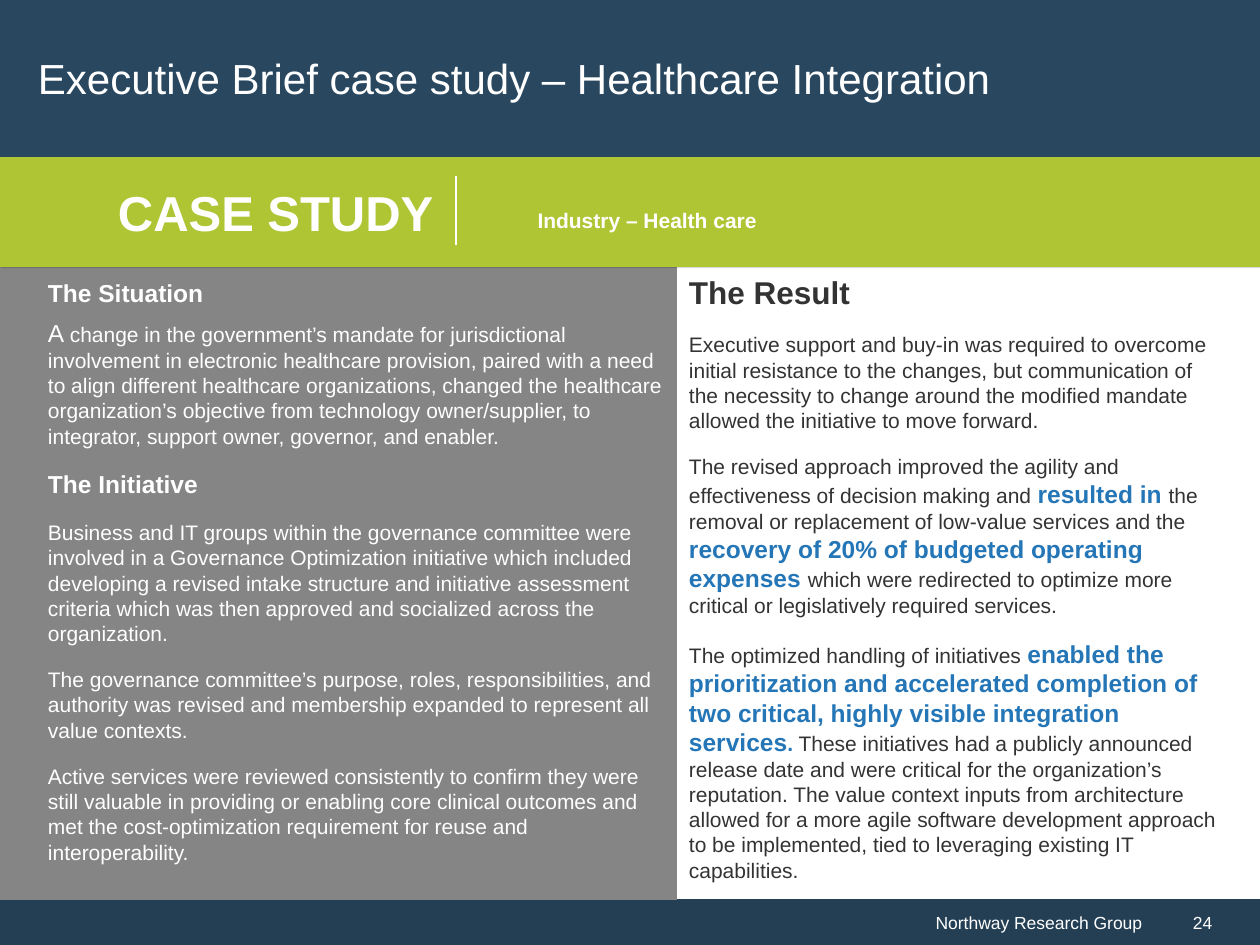
from lxml import etree
from pptx import Presentation
from pptx import util as u
from pptx.dml.color import RGBColor
from pptx.enum import shapes, text
from pptx.oxml.ns import qn

PX = u.Inches(1) / 126
COLORS = {"navy": "29475F", "footer": "243F54", "gray": "858585", "lime": "B0C534",
          "white": "FFFFFF", "dark": "333333", "blue": "2576B7", "black": "000000"}

# style: size in points, bold, colour
STYLES = {
    "title": (24, False, "white"), "banner": (28, True, "white"),
    "industry": (12, True, "white"), "footer": (10, False, "white"),
    "head": (14, True, "white"), "initial": (14, False, "white"), "body": (12, False, "white"),
    "result": (18, True, "dark"), "plain": (12, False, "dark"),
    "key": (14, True, "blue"), "key_small": (12, True, "blue"),
}

TITLE = [[("Executive Brief case study – Healthcare Integration", "title")]]
BANNER = [[("CASE STUDY", "banner")]]
INDUSTRY = [[("Industry – Health care", "industry")]]
GROUP_NAME = [[("Northway Research Group", "footer")]]
PAGE = [[("24", "footer")]]

STORY = [
    [("The Situation", "head")],
    [("A ", "initial"),
     ("change in the government’s mandate for jurisdictional involvement in electronic "
      "healthcare provision, paired with a need to align different healthcare organizations, "
      "changed the healthcare organization’s objective from technology owner/supplier, to "
      "integrator, support owner, governor, and enabler.", "body")],
    [("The Initiative", "head")],
    [("Business and IT groups within the governance committee were involved in a Governance "
      "Optimization initiative which included developing a revised intake structure and "
      "initiative assessment criteria which was then approved and socialized across the "
      "organization.", "body")],
    [("The governance committee’s purpose, roles, responsibilities, and authority was revised "
      "and membership expanded to represent all value contexts.", "body")],
    [("Active services were reviewed consistently to confirm they were still valuable in "
      "providing or enabling core clinical outcomes and met the cost-optimization requirement "
      "for reuse and interoperability.", "body")],
]

RESULT = [
    [("The Result", "result")],
    [("Executive support and buy-in was required to overcome initial resistance to the changes, "
      "but communication of the necessity to change around the modified mandate allowed the "
      "initiative to move forward.", "plain")],
    [("The revised approach improved the agility and effectiveness of decision making and ",
      "plain"),
     ("resulted in ", "key"),
     ("the removal or replacement of low-value services and the ", "plain"),
     ("recovery of 20% of budgeted operating expenses ", "key"),
     ("which were redirected to optimize more critical or legislatively required services.",
      "plain")],
    [("The optimized handling of initiatives ", "plain"),
     ("enabled the prioritization and accelerated completion of two critical, highly visible "
      "integration services", "key"),
     (".", "key_small"),
     (" These initiatives had a publicly announced release date and were critical for the "
      "organization’s reputation. The value context inputs from architecture allowed for a more "
      "agile software development approach to be implemented, tied to leveraging existing IT "
      "capabilities.", "plain")],
]


def px(n):
    return u.Emu(round(n * PX))


def rgb(name):
    return RGBColor.from_string(COLORS[name])


def write(sp, paragraphs, align="LEFT", anchor="MIDDLE", left=13, right=13,
          before=(), after=0, spacing=None):
    """Fill a shape run by run; before lists the space above each paragraph."""
    tf = sp.text_frame
    tf.word_wrap = True
    tf.vertical_anchor = text.MSO_ANCHOR[anchor]
    tf.margin_left, tf.margin_right = px(left), px(right)
    for i, runs in enumerate(paragraphs):
        p = tf.paragraphs[0] if i == 0 else tf.add_paragraph()
        p.alignment = text.PP_ALIGN[align]
        p.space_before = u.Pt(before[i] if before else 0)
        p.space_after = u.Pt(after)
        if spacing:
            p.line_spacing = spacing
        for words, style in runs:
            size, bold, color = STYLES[style]
            r = p.add_run()
            r.text = words
            r.font.name, r.font.size, r.font.bold = "Arial", u.Pt(size), bold
            r.font.color.rgb = rgb(color)


def rect(parent, box, color):
    sp = parent.add_shape(shapes.MSO_SHAPE.RECTANGLE, *map(px, box))
    sp.shadow.inherit = False
    sp.fill.solid()
    sp.fill.fore_color.rgb = rgb(color)
    sp.line.fill.background()
    return sp


def drop_shadow(sp):
    effects = sp._element.spPr.find(qn("a:effectLst"))
    shadow = etree.SubElement(effects, qn("a:outerShdw"), blurRad="0",
                              dist=str(u.Pt(1)), dir=str(45 * 60000))
    color = etree.SubElement(shadow, qn("a:srgbClr"), val=COLORS["black"])
    etree.SubElement(color, qn("a:alpha"), val="14000")


def main():
    prs = Presentation()
    prs.slide_width, prs.slide_height = px(1260), px(945)
    s = prs.slides.add_slide(prs.slide_layouts[6])

    write(rect(s.shapes, (0, 899, 1155, 46), "footer"), GROUP_NAME, align="RIGHT")
    write(rect(s.shapes, (1155, 899, 105, 46), "footer"), PAGE, left=38)
    rect(s.shapes, (0, 245, 677, 655), "gray")
    write(rect(s.shapes, (0, -4, 1260, 164), "navy"), TITLE, left=38, right=38, after=8)

    story = s.shapes.add_textbox(*map(px, (35, 272, 641, 605)))
    write(story, STORY, anchor="TOP", before=(0, 0, 6, 6, 6, 6), after=6)

    banner = s.shapes.add_group_shape().shapes
    band = rect(banner, (0, 157, 1260, 110), "lime")
    drop_shadow(band)
    write(band, BANNER, left=118)
    industry = rect(banner, (456, 189, 314, 50), "lime")
    write(industry, INDUSTRY, align="RIGHT", anchor="TOP", spacing=1.5)
    divider = banner.add_connector(shapes.MSO_CONNECTOR.STRAIGHT,
                                   *map(px, (456, 176, 456, 245)))
    divider.line.color.rgb = rgb("white")
    divider.line.width = u.Pt(0.75)
    etree.SubElement(divider._element.spPr, qn("a:effectLst"))

    result = s.shapes.add_textbox(*map(px, (676, 267, 561, 627)))
    write(result, RESULT, anchor="TOP", before=(6, 6, 6, 6), after=6)

    prs.save("out.pptx")


if __name__ == "__main__":
    main()
